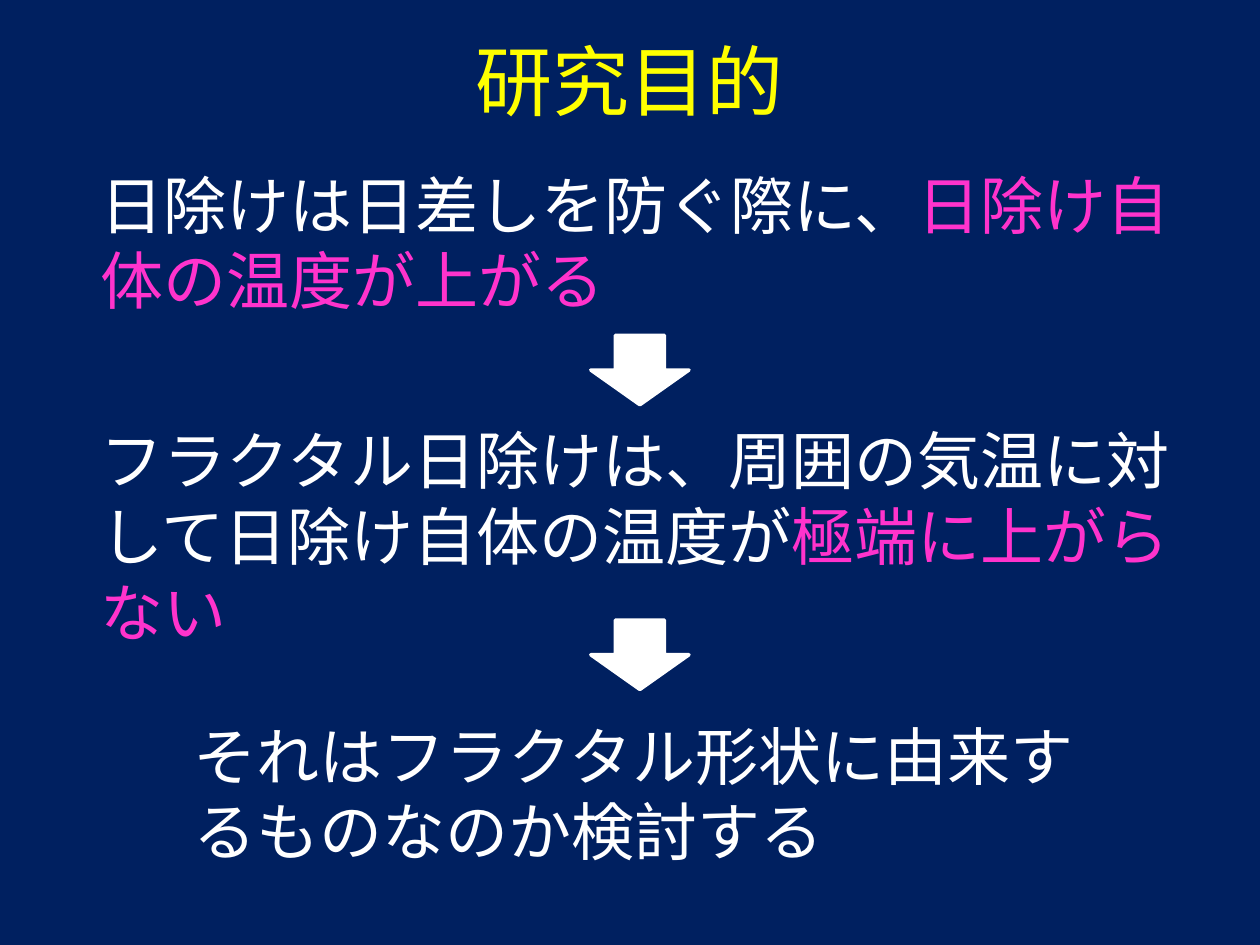
from pptx import Presentation
from pptx.dml.color import RGBColor
from pptx.enum.shapes import MSO_SHAPE
from pptx.enum.text import MSO_ANCHOR, PP_ALIGN
from pptx.util import Cm, Pt

NAVY = RGBColor(0x00, 0x20, 0x60)
YELLOW = RGBColor(0xFF, 0xFF, 0x00)
WHITE = RGBColor(0xFF, 0xFF, 0xFF)
PINK = RGBColor(0xFF, 0x33, 0xCC)


class SlideBuilder:
    """Holds the style and the current slide."""

    font_name = "Calibri"
    title_size = Pt(44)
    body_size = Pt(36)

    def __init__(self, presentation):
        self.slide = presentation.slides.add_slide(presentation.slide_layouts[5])
        background = self.slide.background.fill
        background.solid()
        background.fore_color.rgb = NAVY

    def add_run(self, paragraph, text, size, color):
        run = paragraph.add_run()
        run.text = text
        run.font.name = self.font_name
        run.font.size = size
        run.font.color.rgb = color

    def title(self, text, left, top, width, height):
        title = self.slide.shapes.title
        title.left, title.top = Cm(left), Cm(top)
        title.width, title.height = Cm(width), Cm(height)
        title.text_frame.vertical_anchor = MSO_ANCHOR.MIDDLE
        paragraph = title.text_frame.paragraphs[0]
        paragraph.alignment = PP_ALIGN.CENTER
        self.add_run(paragraph, text, self.title_size, YELLOW)

    def statement(self, runs, left, top, width, height=3.33):
        box = self.slide.shapes.add_textbox(Cm(left), Cm(top), Cm(width), Cm(height))
        box.text_frame.word_wrap = True
        paragraph = box.text_frame.paragraphs[0]
        for text, color in runs:
            self.add_run(paragraph, text, self.body_size, color)

    def down_arrow(self, top, left=11.91, width=1.98, height=1.4):
        arrow = self.slide.shapes.add_shape(
            MSO_SHAPE.DOWN_ARROW, Cm(left), Cm(top), Cm(width), Cm(height))
        arrow.shadow.inherit = False
        arrow.fill.solid()
        arrow.fill.fore_color.rgb = WHITE
        arrow.line.color.rgb = WHITE
        arrow.line.width = Pt(2)


def main():
    presentation = Presentation()
    presentation.slide_width = Cm(25.4)
    presentation.slide_height = Cm(19.05)
    builder = SlideBuilder(presentation)

    builder.title("研究目的", 1.27, 0.4, 22.86, 2.4)

    # Background: the shade itself heats up
    builder.statement([("日除けは日差しを防ぐ際に、", WHITE),
                       ("日除け自体の温度が上がる", PINK)], 1.78, 3.23, 22.63)
    builder.down_arrow(6.76)

    # Observation: the fractal shade stays cool
    builder.statement([("フラクタル日除けは、周囲の気温に対して日除け自体の温度が", WHITE),
                       ("極端に上がらない", PINK)], 1.78, 8.38, 23.01)
    builder.down_arrow(12.5)

    # Aim of the study
    builder.statement([("それはフラクタル形状に由来するものなのか検討する", WHITE)],
                      3.66, 14.33, 18.47)

    presentation.save("out.pptx")


if __name__ == "__main__":
    main()
